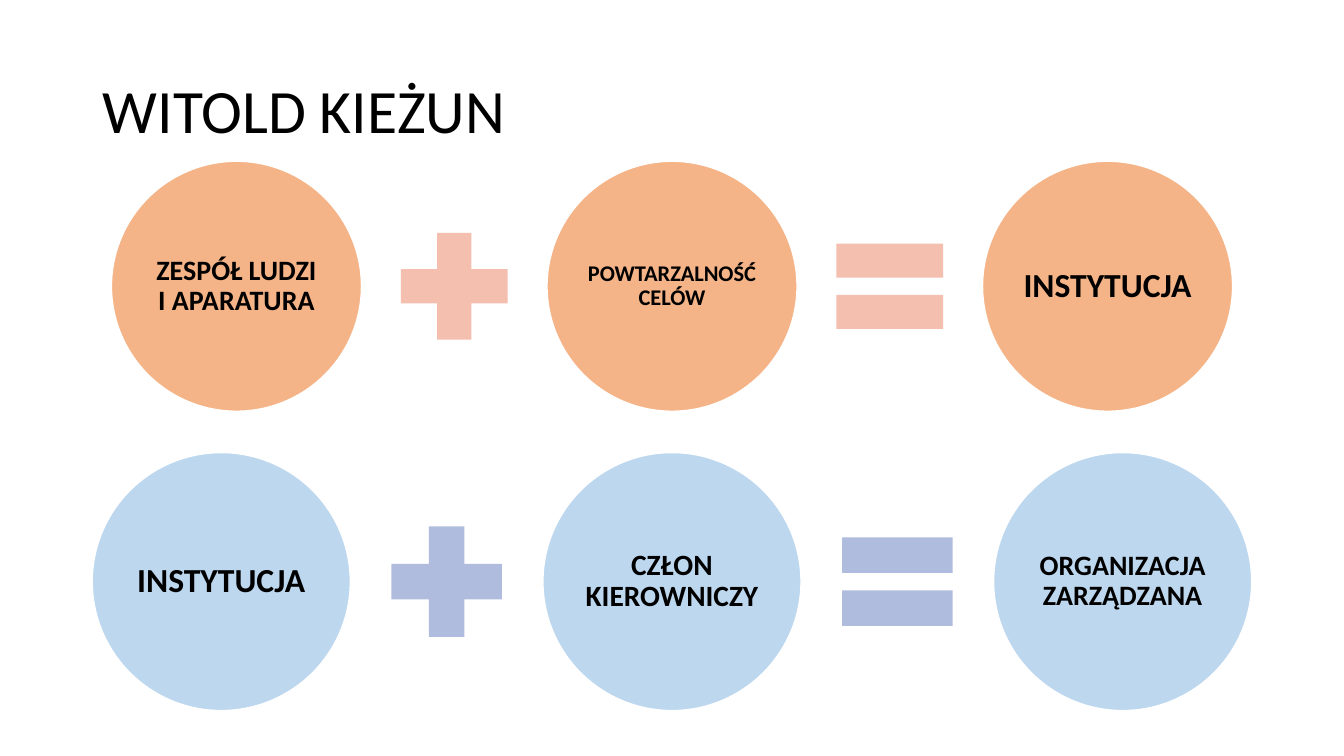
from dataclasses import dataclass

from pptx import Presentation
from pptx.dml.color import RGBColor
from pptx.enum.shapes import MSO_SHAPE
from pptx.enum.text import MSO_ANCHOR, PP_ALIGN
from pptx.shapes.autoshape import Shape
from pptx.shapes.group import GroupShape
from pptx.slide import Slide
from pptx.text.text import TextFrame
from pptx.util import Inches, Pt

ELLIPSE = MSO_SHAPE.OVAL
PLUS, EQUAL = MSO_SHAPE.MATH_PLUS, MSO_SHAPE.MATH_EQUAL
MIDDLE = MSO_ANCHOR.MIDDLE
LEFT, CENTER = PP_ALIGN.LEFT, PP_ALIGN.CENTER

SLIDE_WIDTH, SLIDE_HEIGHT = 13.33, 7.5
FONT = "Calibri"
TITLE_ONLY_LAYOUT = 5
COLORS = {
    "text": "000000",
    "outline": "FFFFFF",
    "blue circle": "BDD7EE",
    "blue operator": "B0BCDE",
    "orange circle": "F5B487",
    "orange operator": "F4BFAE",
}


@dataclass(frozen=True)
class Term:
    text: str
    size: int


@dataclass(frozen=True)
class Equation:
    color: str
    top: float
    diameter: float
    operator_size: float
    gap: float
    terms: tuple[Term, Term, Term]


EQUATIONS = (
    Equation("blue", 4.49, 2.56, 1.49, 0.21, (
        Term("INSTYTUCJA", 24),
        Term("CZŁON KIEROWNICZY", 21),
        Term("ORGANIZACJA ZARZĄDZANA", 20),
    )),
    Equation("orange", 1.6, 2.48, 1.44, 0.2, (
        Term("ZESPÓŁ LUDZI I APARATURA", 20),
        Term("POWTARZALNOŚĆ CELÓW", 16),
        Term("INSTYTUCJA", 24),
    )),
)


def write_text(text_frame: TextFrame, text: str, size: int,
               bold: bool, alignment: PP_ALIGN) -> None:
    text_frame.text = text
    text_frame.word_wrap = True
    text_frame.vertical_anchor = MIDDLE
    paragraph = text_frame.paragraphs[0]
    paragraph.alignment = alignment
    paragraph.line_spacing = 0.9
    font = paragraph.runs[0].font
    font.name, font.size, font.bold = FONT, Pt(size), bold
    font.color.rgb = RGBColor.from_string(COLORS["text"])


def add_square_shape(group: GroupShape, kind: MSO_SHAPE, left: float,
                     top: float, size: float, color: str) -> Shape:
    """Add a filled shape, without an outline, that is as wide as high."""
    shape = group.shapes.add_shape(
        kind, Inches(left), Inches(top), Inches(size), Inches(size))
    shape.shadow.inherit = False
    shape.fill.solid()
    shape.fill.fore_color.rgb = RGBColor.from_string(COLORS[color])
    shape.line.fill.background()
    return shape


def add_term(group: GroupShape, equation: Equation, term: Term, left: float) -> None:
    circle = add_square_shape(group, ELLIPSE, left, equation.top,
                              equation.diameter, f"{equation.color} circle")
    circle.line.color.rgb = RGBColor.from_string(COLORS["outline"])
    circle.line.width = Pt(1)
    text_frame = circle.text_frame
    text_frame.margin_left = text_frame.margin_right = Inches(0.03)
    text_frame.margin_top = text_frame.margin_bottom = Inches(0.03)
    write_text(text_frame, term.text, term.size, True, CENTER)


def add_equation(slide: Slide, equation: Equation) -> None:
    """Draw three circles with a plus and an equals sign, centred on the slide."""
    group = slide.shapes.add_group_shape()
    pitch = equation.diameter + equation.operator_size + 2 * equation.gap
    first_left = SLIDE_WIDTH / 2 - pitch - equation.diameter / 2
    operator_top = equation.top + (equation.diameter - equation.operator_size) / 2
    for index, term in enumerate(equation.terms):
        left = first_left + index * pitch
        add_term(group, equation, term, left)
        if index < 2:
            add_square_shape(group, (PLUS, EQUAL)[index],
                             left + equation.diameter + equation.gap, operator_top,
                             equation.operator_size, f"{equation.color} operator")


def add_title(slide: Slide, text: str) -> None:
    title = slide.shapes.title
    title.left, title.top = Inches(0.92), Inches(0.4)
    title.width, title.height = Inches(11.5), Inches(1.45)
    write_text(title.text_frame, text, 44, False, LEFT)


def main() -> None:
    presentation = Presentation()
    presentation.slide_width = Inches(SLIDE_WIDTH)
    presentation.slide_height = Inches(SLIDE_HEIGHT)
    slide = presentation.slides.add_slide(presentation.slide_layouts[TITLE_ONLY_LAYOUT])
    add_title(slide, "WITOLD KIEŻUN")
    for equation in EQUATIONS:
        add_equation(slide, equation)
    presentation.save("out.pptx")


if __name__ == "__main__":
    main()
